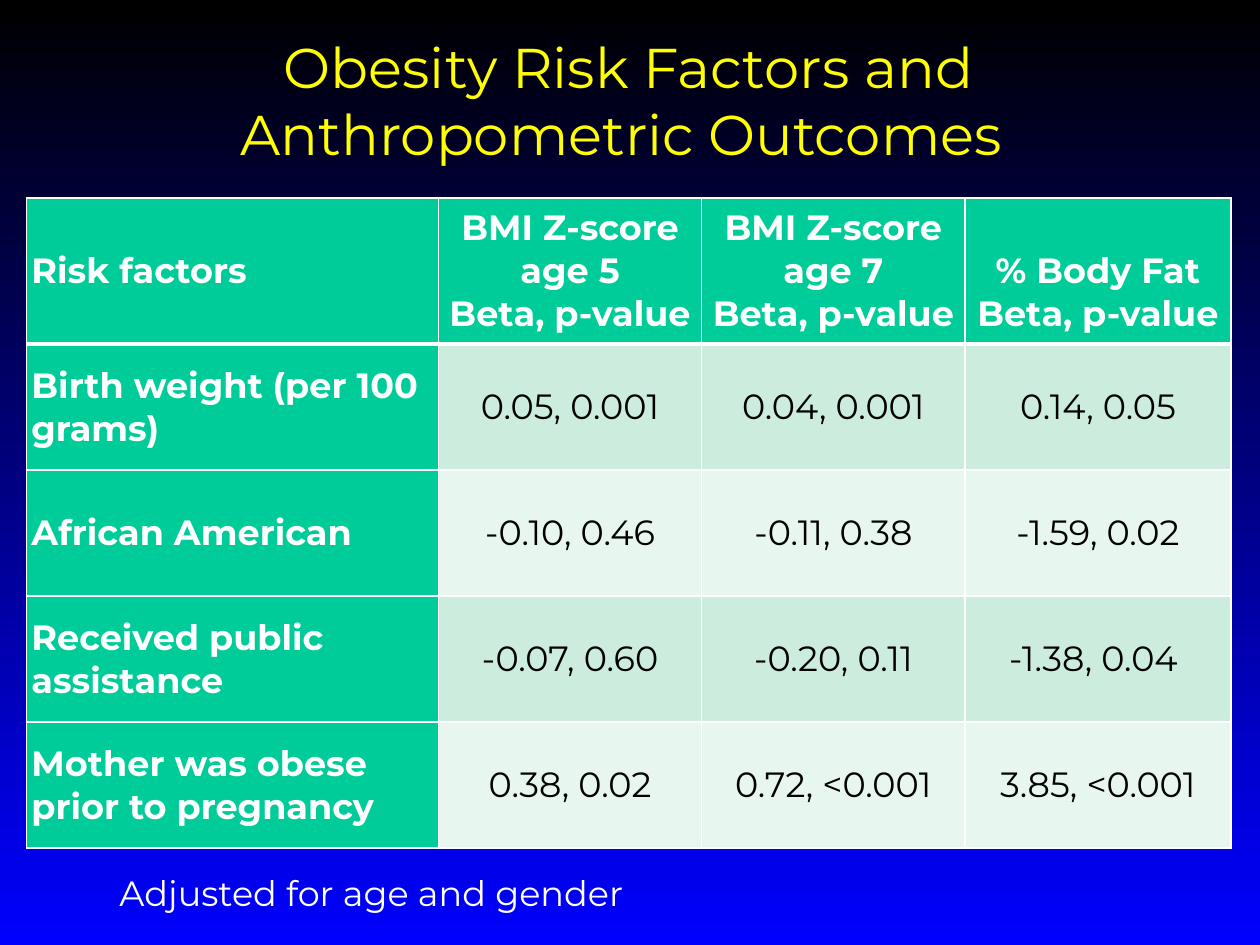
from dataclasses import dataclass

from lxml.etree import SubElement
from pptx import Presentation
from pptx.dml.color import RGBColor
from pptx.enum.text import MSO_ANCHOR, PP_ALIGN
from pptx.oxml.ns import qn
from pptx.util import Inches, Pt

FONT = "Montserrat"
COLORS = {
    "black": "000000",
    "blue": "0000FF",
    "yellow": "FFFF00",
    "white": "FFFFFF",
    "green": "00CC99",
    "band_dark": "CCECDE",
    "band_light": "E7F6EF",
}
COL_WIDTHS = (3.27, 2.09, 2.09, 2.11)
ROW_HEIGHTS = (1.16, 1, 1, 1, 1)
LINE_HEIGHT = 0.34


@dataclass(frozen=True)
class RiskRow:
    factor: str
    outcomes: tuple[str, str, str]


HEADER = RiskRow("Risk factors", (
    "BMI Z-score age 5\nBeta, p-value",
    "BMI Z-score age 7\nBeta, p-value",
    "% Body Fat\nBeta, p-value",
))
RISKS = (
    RiskRow("Birth weight (per 100 grams)", ("0.05, 0.001", "0.04, 0.001", "0.14, 0.05")),
    RiskRow("African American", ("-0.10, 0.46", "-0.11, 0.38", "-1.59, 0.02")),
    RiskRow("Received public assistance", ("-0.07, 0.60", "-0.20, 0.11", "-1.38, 0.04 ")),
    RiskRow("Mother was obese prior to pregnancy", ("0.38, 0.02", "0.72, <0.001", "3.85, <0.001")),
)


def rgb(name: str) -> RGBColor:
    return RGBColor.from_string(COLORS[name])


def write(tf, text: str, color: str, size: int = 20, bold: bool = False,
          align: PP_ALIGN = PP_ALIGN.LEFT) -> None:
    """Fill a text frame, one paragraph for each line of text."""
    tf.text = text
    font_format = {"name": FONT, "size": Pt(size), "bold": bold}
    for p in tf.paragraphs:
        p.alignment = align
        for r in p.runs:
            for key, value in font_format.items():
                setattr(r.font, key, value)
            r.font.color.rgb = rgb(color)


def set_borders(cell, top: int, bottom: int) -> None:
    tc_pr = cell._tc.get_or_add_tcPr()
    for side, width in {"L": 1, "R": 1, "T": top, "B": bottom}.items():
        ln = SubElement(tc_pr, qn(f"a:ln{side}"), w=str(Pt(width)))
        fill = SubElement(ln, qn("a:solidFill"))
        SubElement(fill, qn("a:srgbClr"), val=COLORS["white"])


def draw_cell(cell, text: str, row: int, col: int) -> None:
    heading = row == 0 or col == 0
    band = "band_dark" if row % 2 else "band_light"
    cell_format = {
        "margin_left": Inches(0.04), "margin_right": Inches(0.04),
        "margin_top": 0, "margin_bottom": 0,
        "vertical_anchor": MSO_ANCHOR.MIDDLE,
    }
    for key, value in cell_format.items():
        setattr(cell, key, value)
    set_borders(cell, top=3 if row == 1 else 1, bottom=3 if row == 0 else 1)
    cell.fill.solid()
    cell.fill.fore_color.rgb = rgb("green" if heading else band)
    write(cell.text_frame, text, "white" if heading else "black", bold=heading,
          align=PP_ALIGN.CENTER if col else PP_ALIGN.LEFT)


def draw_table(s, rows: tuple[RiskRow, ...]) -> None:
    table = s.shapes.add_table(
        len(rows), len(COL_WIDTHS), Inches(0.21), Inches(1.57),
        Inches(sum(COL_WIDTHS)), Inches(sum(ROW_HEIGHTS))).table
    for column, width in zip(table.columns, COL_WIDTHS):
        column.width = Inches(width)
    for i, (risk, height) in enumerate(zip(rows, ROW_HEIGHTS)):
        table.rows[i].height = Inches(height)
        for j, text in enumerate((risk.factor, *risk.outcomes)):
            draw_cell(table.cell(i, j), text, i, j)
    # The shorter body fat heading lines up with the bottom of its neighbours.
    table.cell(0, len(COL_WIDTHS) - 1).margin_top = Inches(LINE_HEIGHT)


def draw_title(s, text: str) -> None:
    title = s.shapes.title
    box = {"left": 0.41, "top": 0.21, "width": 9.16, "height": 1.18}
    for key, value in box.items():
        setattr(title, key, Inches(value))
    title.text_frame.vertical_anchor = MSO_ANCHOR.TOP
    write(title.text_frame, text, "yellow", size=32, align=PP_ALIGN.CENTER)


def draw_footnote(s, text: str) -> None:
    tf = s.shapes.add_textbox(
        Inches(0.85), Inches(6.87), Inches(8.13), Inches(0.44)).text_frame
    tf.word_wrap = True
    write(tf, text, "white")


def draw_background(s) -> None:
    fill = s.background.fill
    fill.gradient()
    fill.gradient_angle = 270
    for stop, color in zip(fill.gradient_stops, ("black", "blue")):
        stop.color.rgb = rgb(color)


def main() -> None:
    prs = Presentation()
    prs.slide_width, prs.slide_height = Inches(10), Inches(7.5)
    s = prs.slides.add_slide(prs.slide_layouts[5])
    draw_background(s)
    draw_table(s, (HEADER, *RISKS))
    draw_title(s, "Obesity Risk Factors and Anthropometric Outcomes ")
    draw_footnote(s, "Adjusted for age and gender")
    prs.save("out.pptx")


if __name__ == "__main__":
    main()
